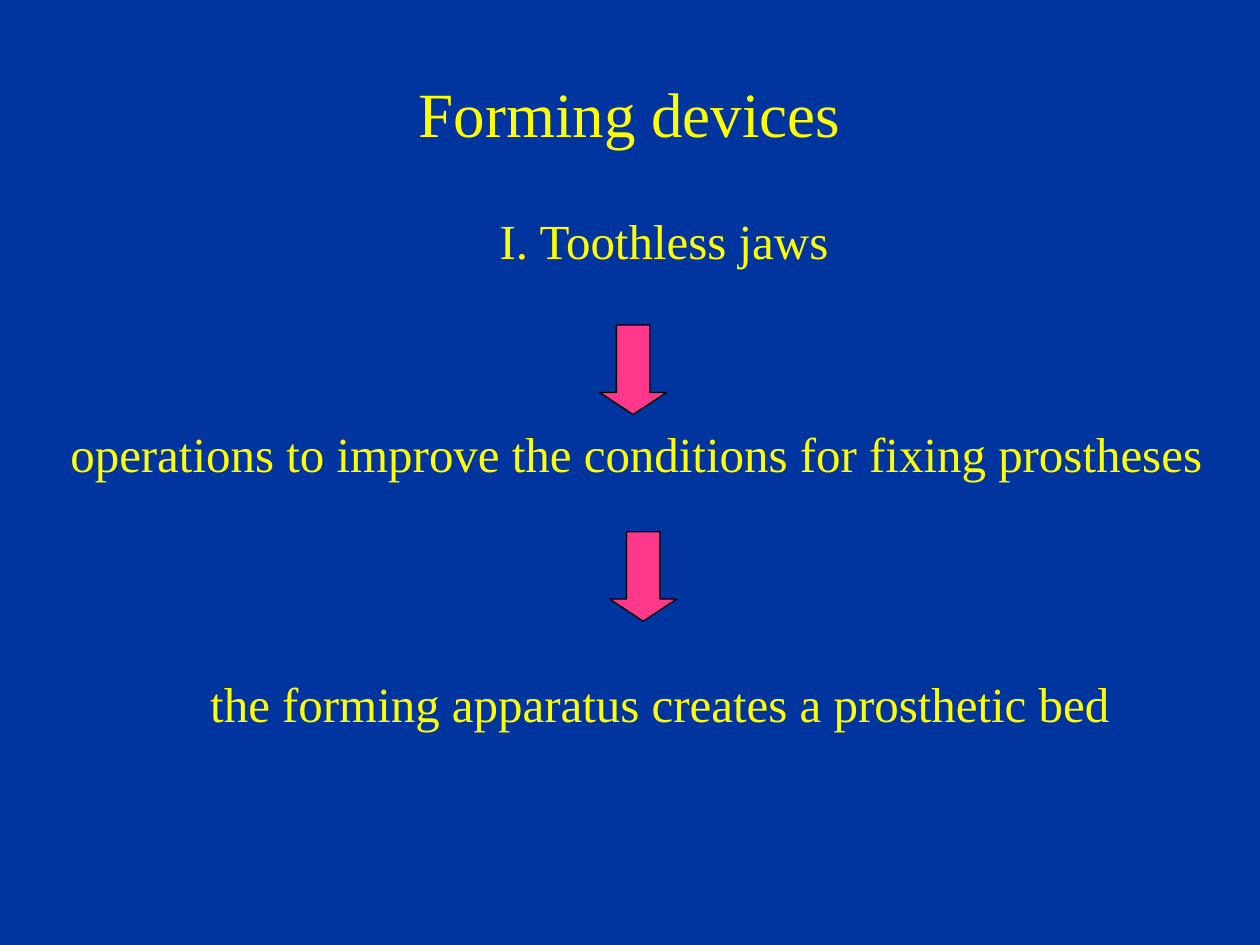
from dataclasses import dataclass

from pptx import Presentation
from pptx.dml.color import RGBColor
from pptx.enum import shapes, text
from pptx.util import Inches, Pt

FONT = "Times New Roman"
COLORS = {"back": "00349E", "text": "FFFF00", "arrow": "FF388C", "edge": "000000"}
ALIGN = text.PP_ALIGN


@dataclass
class Step:
    words: str
    left: float
    top: float
    width: float
    height: float = 0.57
    wrap: bool = False
    align: ALIGN = ALIGN.LEFT


@dataclass
class Arrow:
    left: float
    top: float
    width: float = 0.53
    height: float = 0.71


STEPS = [
    Step("I. Toothless jaws", 1.06, 1.62, 8.42, 4, True, ALIGN.CENTER),
    Step("operations to improve the conditions for fixing prostheses", 0.46, 3.31, 9.28),
    Step("the forming apparatus creates a prosthetic bed", 1.57, 5.3, 7.41),
]
ARROWS = [Arrow(4.76, 2.58), Arrow(4.84, 4.22)]


def color(name: str) -> RGBColor:
    return RGBColor.from_string(COLORS[name])


def place(item) -> tuple:
    return tuple(Inches(n) for n in (item.left, item.top, item.width, item.height))


def write(frame, words: str, size: int, align: ALIGN) -> None:
    frame.text = words
    line = frame.paragraphs[0]
    line.alignment = align
    font = line.runs[0].font
    font.name, font.size = FONT, Pt(size)
    font.color.rgb = color("text")


def add_title(slide, words: str) -> None:
    title = slide.shapes.title
    title.left, title.top = Inches(2.98), Inches(0.33)
    title.width, title.height = Inches(3.79), Inches(0.91)
    frame = title.text_frame
    frame.vertical_anchor = text.MSO_ANCHOR.BOTTOM
    write(frame, words, 36, ALIGN.RIGHT)


def add_step(slide, step: Step) -> None:
    frame = slide.shapes.add_textbox(*place(step)).text_frame
    frame.word_wrap = step.wrap
    if not step.wrap:
        frame.auto_size = text.MSO_AUTO_SIZE.SHAPE_TO_FIT_TEXT
    write(frame, step.words, 28, step.align)


def add_arrow(slide, arrow: Arrow) -> None:
    shape = slide.shapes.add_shape(shapes.MSO_SHAPE.DOWN_ARROW, *place(arrow))
    shape.adjustments[0], shape.adjustments[1] = 0.5, 0.33
    shape.shadow.inherit = False
    shape.fill.solid()
    shape.fill.fore_color.rgb = color("arrow")
    shape.line.color.rgb = color("edge")
    shape.line.width = Pt(0.75)


def main() -> None:
    deck = Presentation()
    deck.slide_width, deck.slide_height = Inches(10), Inches(7.5)
    slide = deck.slides.add_slide(deck.slide_layouts[5])
    fill = slide.background.fill
    fill.solid()
    fill.fore_color.rgb = color("back")

    add_title(slide, "Forming devices")
    for step in STEPS:
        add_step(slide, step)
    for arrow in ARROWS:
        add_arrow(slide, arrow)
    deck.save("out.pptx")


if __name__ == "__main__":
    main()
